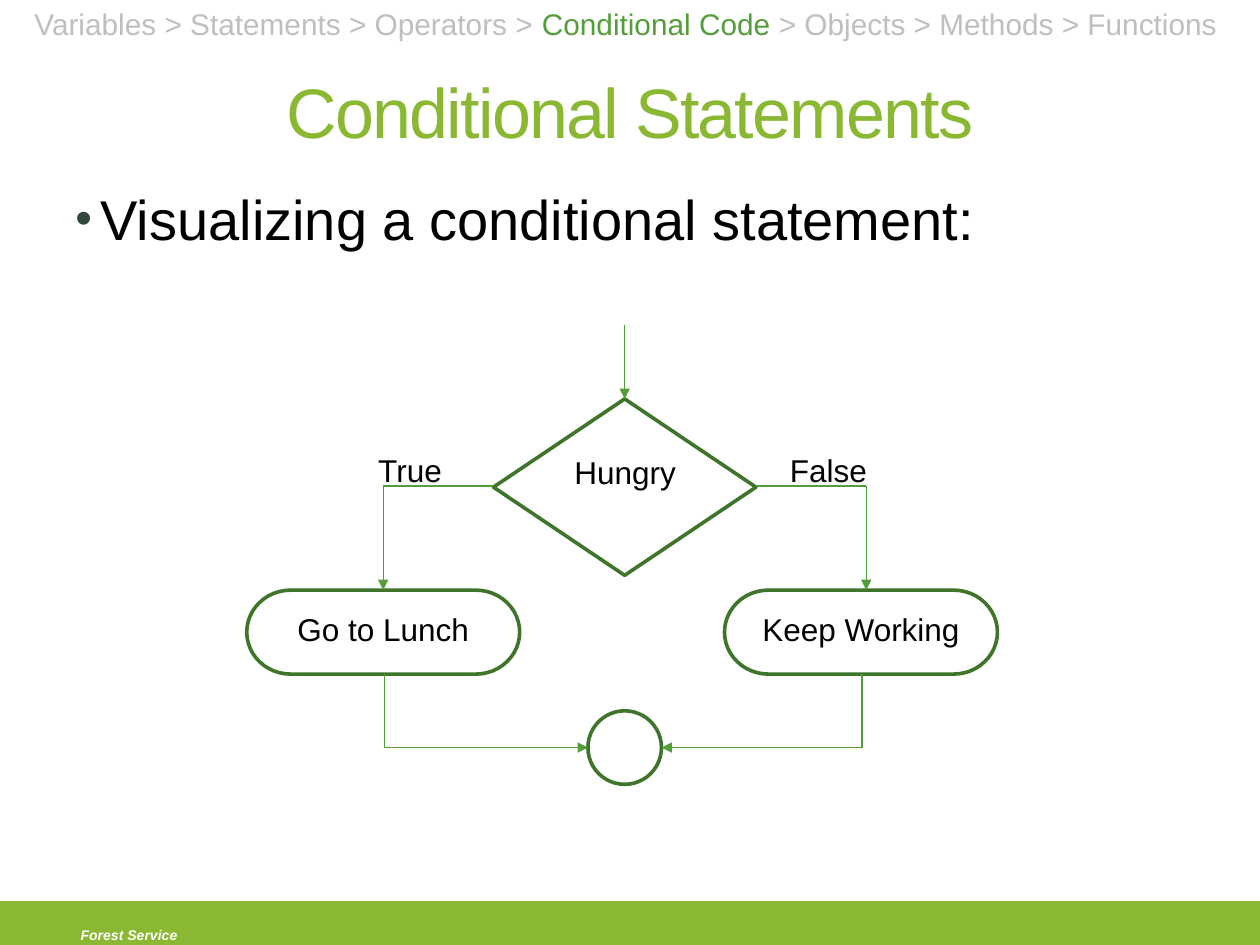
from dataclasses import dataclass
from lxml.etree import SubElement
from pptx import Presentation
from pptx.dml.color import RGBColor
from pptx.enum.shapes import MSO_CONNECTOR as Link, MSO_SHAPE as Shape
from pptx.enum.text import MSO_ANCHOR as Anchor, MSO_AUTO_SIZE as Fit, PP_ALIGN as Align
from pptx.oxml.ns import qn
from pptx.util import Inches, Pt


def color(value):
    """Turn a hex string into a colour."""
    return RGBColor.from_string(value)


def cells(*counts):
    """Turn counts of grid cells, twelve to the inch, into lengths."""
    return [Inches(count / 12) for count in counts]


@dataclass
class FlowSlide:
    """Holds the slide and its style, and draws each kind of element."""
    slide: object
    font: str = "Arial"
    lime: str = "8AB833"
    green: str = "549E39"
    dark: str = "3E752A"
    gray: str = "BFBFBF"
    black: str = "000000"
    white: str = "FFFFFF"
    outline: float = 2.08
    hairline: float = 0.75

    def text(self, area, runs, size, align=Align.LEFT, wrap=True, anchor=Anchor.TOP,
             bold=None, spacing=None):
        """Add a one-paragraph text box made of (text, colour) runs."""
        frame = self.slide.shapes.add_textbox(*cells(*area)).text_frame
        frame.word_wrap = wrap
        frame.auto_size = Fit.NONE
        frame.vertical_anchor = anchor
        paragraph = frame.paragraphs[0]
        paragraph.alignment = align
        for words, tint in runs:
            run = paragraph.add_run()
            run.text = words
            run.font.name, run.font.size = self.font, Pt(size)
            run.font.bold = run.font.italic = bold
            run.font.color.rgb = color(tint)
            if spacing:
                run.font._element.set("spc", str(spacing * 100))
        return paragraph

    def bullet(self, area, words, size, tint):
        """Add a bulleted line with a hanging indent."""
        paragraph = self.text(area, [(words, self.black)], size)
        props = paragraph._p.get_or_add_pPr()
        props.set("marL", str(Inches(0.2)))
        props.set("indent", str(Inches(-0.2)))
        SubElement(SubElement(props, qn("a:buClr")), qn("a:srgbClr"), val=tint)
        SubElement(props, qn("a:buSzPct"), val="85000")
        SubElement(props, qn("a:buFont"), typeface=self.font)
        SubElement(props, qn("a:buChar"), char="•")

    def label(self, area, words):
        """Add a centred flowchart label."""
        self.text(area, [(words, self.black)], 18, Align.CENTER, wrap=False)

    def node(self, kind, area, line, fill=None):
        """Add an outlined shape, filled if a colour is given."""
        node = self.slide.shapes.add_shape(kind, *cells(*area))
        node.shadow.inherit = False
        if fill:
            node.fill.solid()
            node.fill.fore_color.rgb = color(fill)
        else:
            node.fill.background()
        node.line.color.rgb = color(line)
        node.line.width = Pt(self.outline)

    def route(self, *stops):
        """Join the stops with straight lines, the last one with an arrowhead."""
        for start, end in zip(stops, stops[1:]):
            leg = self.slide.shapes.add_connector(Link.STRAIGHT, *cells(*start, *end))
            leg.line.color.rgb = color(self.green)
            leg.line.width = Pt(self.hairline)
            SubElement(leg._element.spPr, qn("a:effectLst"))
        SubElement(leg.line._get_or_add_ln(), qn("a:tailEnd"), type="triangle")


def main():
    """Build the slide and save it."""
    deck = Presentation()
    deck.slide_width, deck.slide_height = cells(120, 90)
    page = FlowSlide(deck.slides.add_slide(deck.slide_layouts[6]))

    page.node(Shape.RECTANGLE, (0, 86, 120, 4.3), page.lime, page.lime)
    page.text((6.5, 87.7, 24.5, 2.9), [("Forest Service", page.white)], 8, bold=True)
    page.text((6, 4, 108, 13), [("Conditional Statements", page.lime)], 40,
              Align.CENTER, anchor=Anchor.MIDDLE, spacing=-1)
    page.bullet((6, 17, 108, 66), "Visualizing a conditional statement:", 32, "34473D")

    center, split, merge = 59.5, 46.3, 71.2
    step_top, step_height, step_width = 56.2, 8, 26
    choice_width, join_size = 25, 7
    page.node(Shape.FLOWCHART_DECISION,
              (center - choice_width / 2, 38, choice_width, 16.8), page.dark)
    page.label((53.4, 42.6, 13.1, 4.8), "Hungry ")
    page.node(Shape.OVAL, (center - join_size / 2, merge - join_size / 2,
                           join_size, join_size), page.dark)
    page.route((center, 31), (center, 38))

    branches = [
        (-1, 23.5, 36.5, 36.6, (34.8, 8.5), "True", (27, 19), "Go to Lunch"),
        (1, 69, 82.5, 82.1, (74, 9.8), "False", (71.3, 21.4), "Keep Working"),
    ]
    for side, left, entry, leave, (x, width), answer, (step_x, step_w), step in branches:
        page.node(Shape.FLOWCHART_TERMINATOR, (left, step_top, step_width, step_height), page.dark)
        page.label((step_x, 57.5, step_w, 4.8), step)
        page.route((center + side * choice_width / 2, split), (entry, split), (entry, step_top))
        page.route((leave, step_top + step_height), (leave, merge),
                   (center + side * join_size / 2, merge))
        page.label((x, 42.4, width, 4.8), answer)

    page.text((0, 0, 120, 4.7), [
        ("Variables > Statements > Operators > ", page.gray),
        ("Conditional Code ", page.green),
        ("> Objects > Methods > Functions ", page.gray),
    ], 17, Align.CENTER)
    deck.save("out.pptx")


if __name__ == "__main__":
    main()
